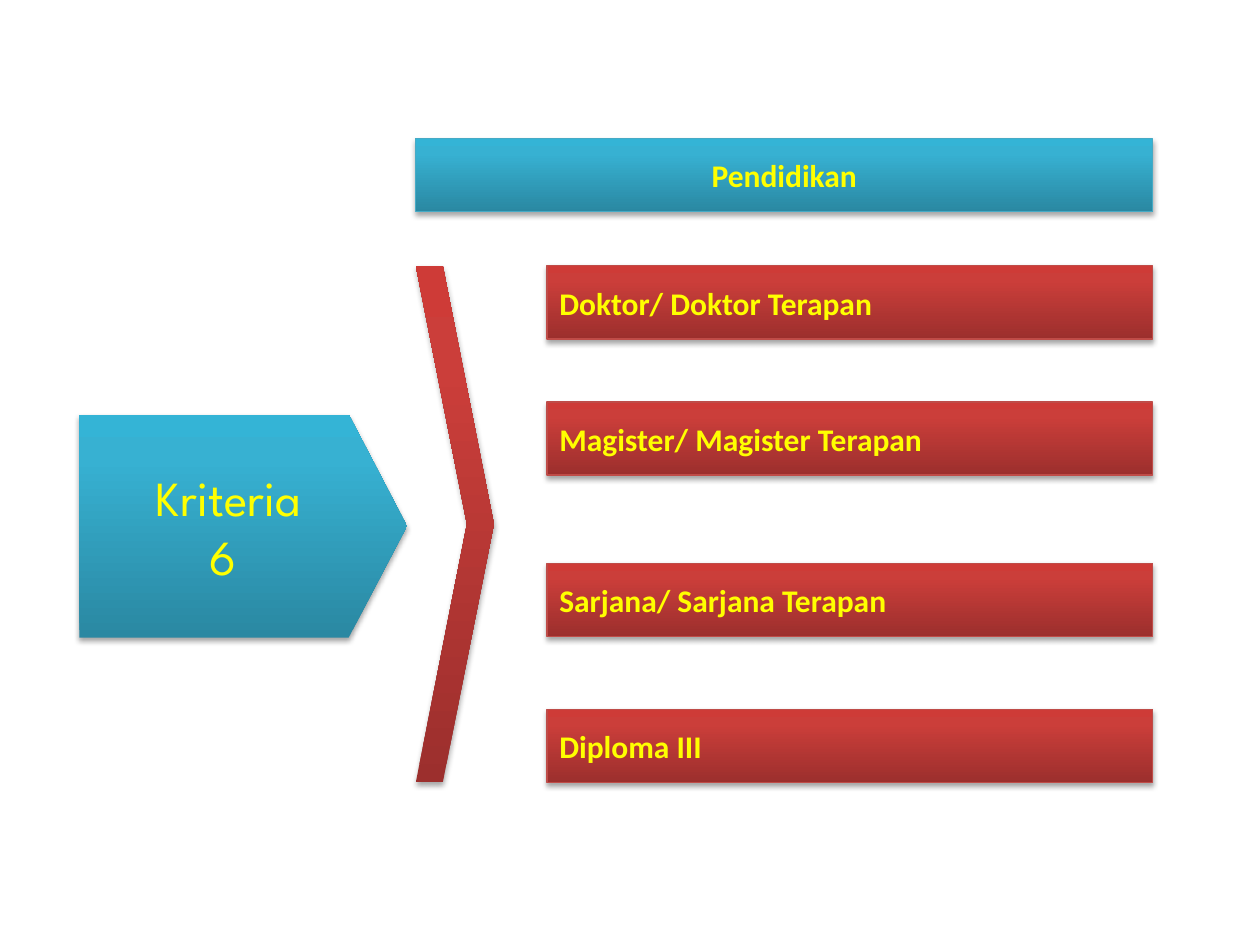
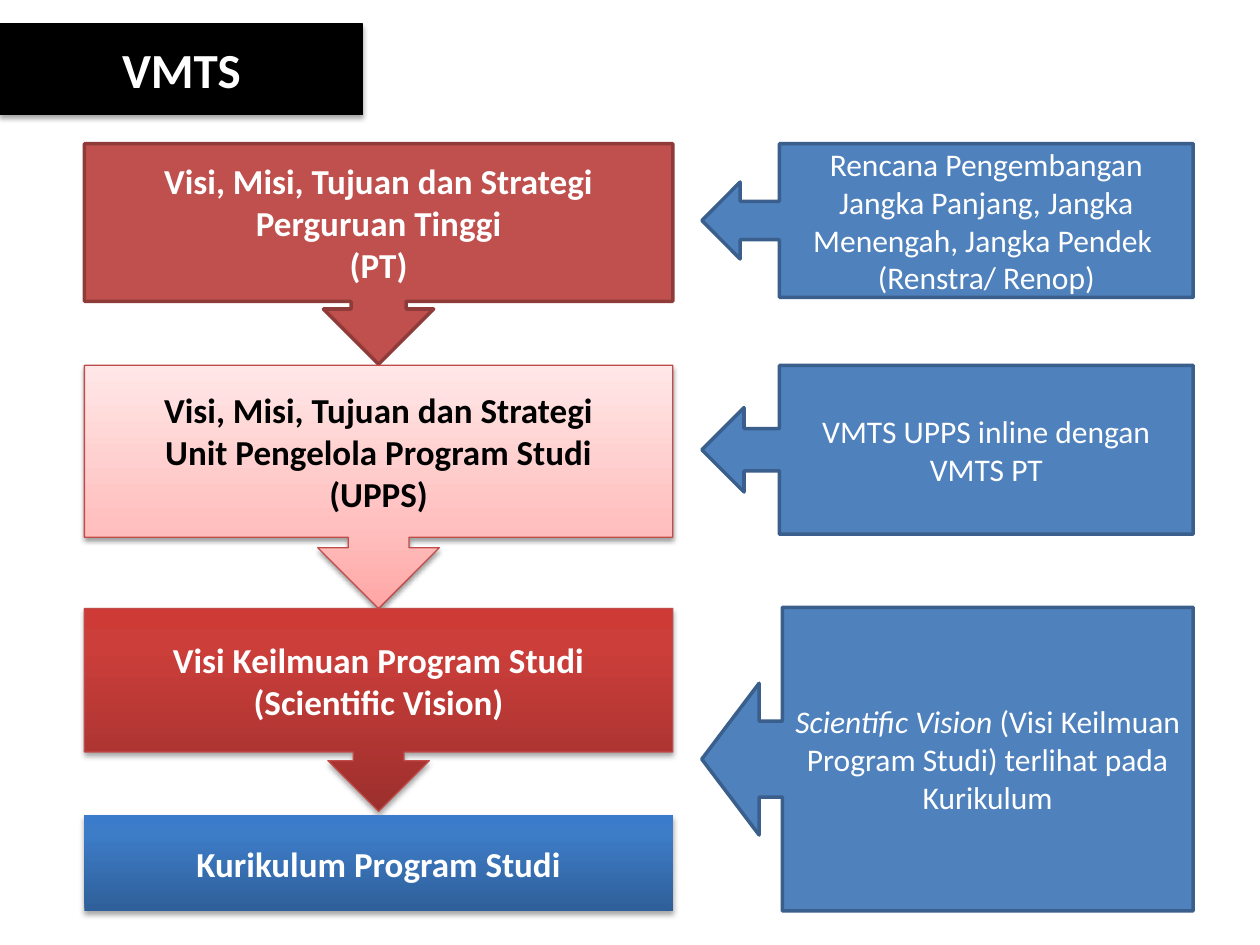
from dataclasses import dataclass
from lxml import etree
from pptx import Presentation
from pptx import util as u
from pptx.dml.color import RGBColor
from pptx.enum import shapes, text
from pptx.oxml import ns

LEVELS = [
    ("Doktor/ Doktor Terapan", 2.11),
    ("Magister/ Magister Terapan", 3.19),
    ("Sarjana/ Sarjana Terapan", 4.47),
    ("Diploma III", 5.63),
]
STEPS = [
    (["Visi, Misi, Tujuan dan Strategi", "Perguruan Tinggi", "(PT)"],
     1.14, 1.75, 0.715, "brick", "white"),
    (["Visi, Misi, Tujuan dan Strategi", "Unit Pengelola Program Studi", "(UPPS)"],
     2.9, 1.93, 0.707, "pink", "black"),
    (["Visi Keilmuan Program Studi", "(Scientific Vision)"],
     4.83, 1.61, 0.707, "red", "white"),
]
NOTES = [
    (["Rencana Pengembangan Jangka Panjang, Jangka Menengah, Jangka Pendek ",
      "(Renstra/ Renop)"], 1.14, 1.22, 0.25, 0.842),
    (["VMTS UPPS inline dengan VMTS PT"], 2.9, 1.34, 0.25, 0.842),
    ([[("Scientific Vision ", True),
       ("(Visi Keilmuan Program Studi) terlihat pada Kurikulum", False)]],
     4.82, 2.41, 0.189, 0.836),
]


@dataclass
class Paint:
    stops: tuple
    line: str = ""
    width: float = 0.75
    shade: tuple = (35, 1.8)


class Theme:
    font, accent = "Calibri", "League Spartan"
    big, mid, small = 28, 20, 18
    ink = {"white": "FFFFFF", "black": "000000", "yellow": "FFFF00"}
    red_stops = ((0, "9C2F2D"), (80, "CB3E3A"), (100, "CE3B37"))
    teal_stops = ((0, "2A88A2"), (80, "37B1D2"), (100, "34B4D6"))
    paint = {
        "red": Paint(red_stops, "BF4C48"),
        "bare red": Paint(red_stops),
        "teal": Paint(teal_stops, "46AAC5"),
        "bare teal": Paint(teal_stops),
        "navy": Paint(((0, "2F5F99"), (80, "3D7CC7"), (100, "3A7CCB"))),
        "pink": Paint(((0, "FFA6A5"), (35, "FFC0BF"), (100, "FFE7E7")),
                      "BF4C48", shade=(38, 1.6)),
        "brick": Paint(((0, "C0504D"),), "8E3B39", 2, ()),
        "blue": Paint(((0, "4F81BD"),), "3A5F8C", 2, ()),
        "black": Paint(((0, "000000"),), "000000"),
    }


def node(parent, tag, **attrs):
    return etree.SubElement(parent, ns.qn("a:" + tag),
                            {key: str(val) for key, val in attrs.items()})


def tint(shape, name):
    paint = Theme.paint[name]
    if len(paint.stops) == 1:
        shape.fill.solid()
        shape.fill.fore_color.rgb = RGBColor.from_string(paint.stops[0][1])
    else:
        shape.fill.gradient()
        shape.fill.gradient_angle = 90
        stops = shape._element.spPr.find(".//" + ns.qn("a:gsLst"))
        for old in list(stops):
            stops.remove(old)
        for pos, color in paint.stops:
            node(node(stops, "gs", pos=pos * 1000), "srgbClr", val=color)
    if paint.line:
        shape.line.color.rgb = RGBColor.from_string(paint.line)
        shape.line.width = u.Pt(paint.width)
    else:
        shape.line.fill.background()
    shape.shadow.inherit = False
    if paint.shade:
        alpha, dist = paint.shade
        effects = shape._element.spPr.find(ns.qn("a:effectLst"))
        shadow = node(effects, "outerShdw", blurRad=u.Pt(3.1), dist=u.Pt(dist),
                      dir=5400000, rotWithShape=0)
        node(node(shadow, "srgbClr", val="000000"), "alpha", val=alpha * 1000)


def write(shape, paras, size=Theme.small, ink="white", bold=False,
          font=Theme.font, align="CENTER"):
    frame = shape.text_frame
    frame.word_wrap = True
    frame.auto_size = text.MSO_AUTO_SIZE.NONE
    frame.vertical_anchor = text.MSO_ANCHOR.MIDDLE
    for num, para in enumerate(paras):
        line = frame.add_paragraph() if num else frame.paragraphs[0]
        line.alignment = text.PP_ALIGN[align]
        for words, slant in [(para, False)] if isinstance(para, str) else para:
            run = line.add_run()
            run.text = words
            run.font.size = u.Pt(size)
            run.font.name = font
            run.font.bold = bold
            run.font.italic = slant
            run.font.color.rgb = RGBColor.from_string(Theme.ink[ink])


def place(slide, kind, box, paint, adjust=()):
    shape = slide.shapes.add_shape(shapes.MSO_SHAPE[kind], *map(u.Inches, box))
    for num, val in enumerate(adjust):
        shape.adjustments[num] = val
    tint(shape, paint)
    return shape


def head(slide, words, box, paint, outline="rect", adjust=None, **style):
    title = slide.shapes.title
    title.left, title.top, title.width, title.height = map(u.Inches, box)
    guides = node(node(title._element.spPr, "prstGeom", prst=outline), "avLst")
    if adjust:
        node(guides, "gd", name="adj", fmla=f"val {round(adjust * 100000)}")
    tint(title, paint)
    write(title, [words], bold=True, **style)


def levels(slide):
    head(slide, "Pendidikan", (3.3, 1.1, 5.85, 0.58), "teal", ink="yellow")
    place(slide, "CHEVRON", (3.3, 2.11, 0.62, 4.1), "bare red", [0.654])
    label = place(slide, "PENTAGON", (0.63, 3.29, 2.6, 1.77), "bare teal", [0.261])
    write(label, ["Kriteria", "6 "], size=Theme.big, ink="yellow", font=Theme.accent)
    for words, top in LEVELS:
        bar = place(slide, "RECTANGLE", (4.34, top, 4.81, 0.58), "red")
        write(bar, [words], ink="yellow", bold=True, align="LEFT")


def vision(slide):
    head(slide, "VMTS", (0, 0.19, 2.88, 0.72), "black", "homePlate", 0.297,
         size=Theme.big)
    left, wide = 0.67, 4.67
    for paras, top, high, body, paint, ink in STEPS:
        step = place(slide, "DOWN_ARROW_CALLOUT", (left, top, wide, high), paint,
                     [0.25, 0.25, 0.25, body])
        write(step, paras, size=Theme.mid, ink=ink, bold=True)
    base = place(slide, "RECTANGLE", (left, 6.47, wide, 0.76), "navy")
    write(base, ["Kurikulum Program Studi"], size=Theme.mid, bold=True)
    for paras, top, high, tip, body in NOTES:
        note = place(slide, "LEFT_ARROW_CALLOUT", (5.57, top, 3.9, high), "blue",
                     [0.25, 0.25, tip, body])
        write(note, paras)


def main():
    deck = Presentation()
    deck.slide_width, deck.slide_height = u.Inches(10), u.Inches(7.5)
    for build in (levels, vision):
        build(deck.slides.add_slide(deck.slide_layouts[5]))
    deck.save("out.pptx")


if __name__ == "__main__":
    main()
